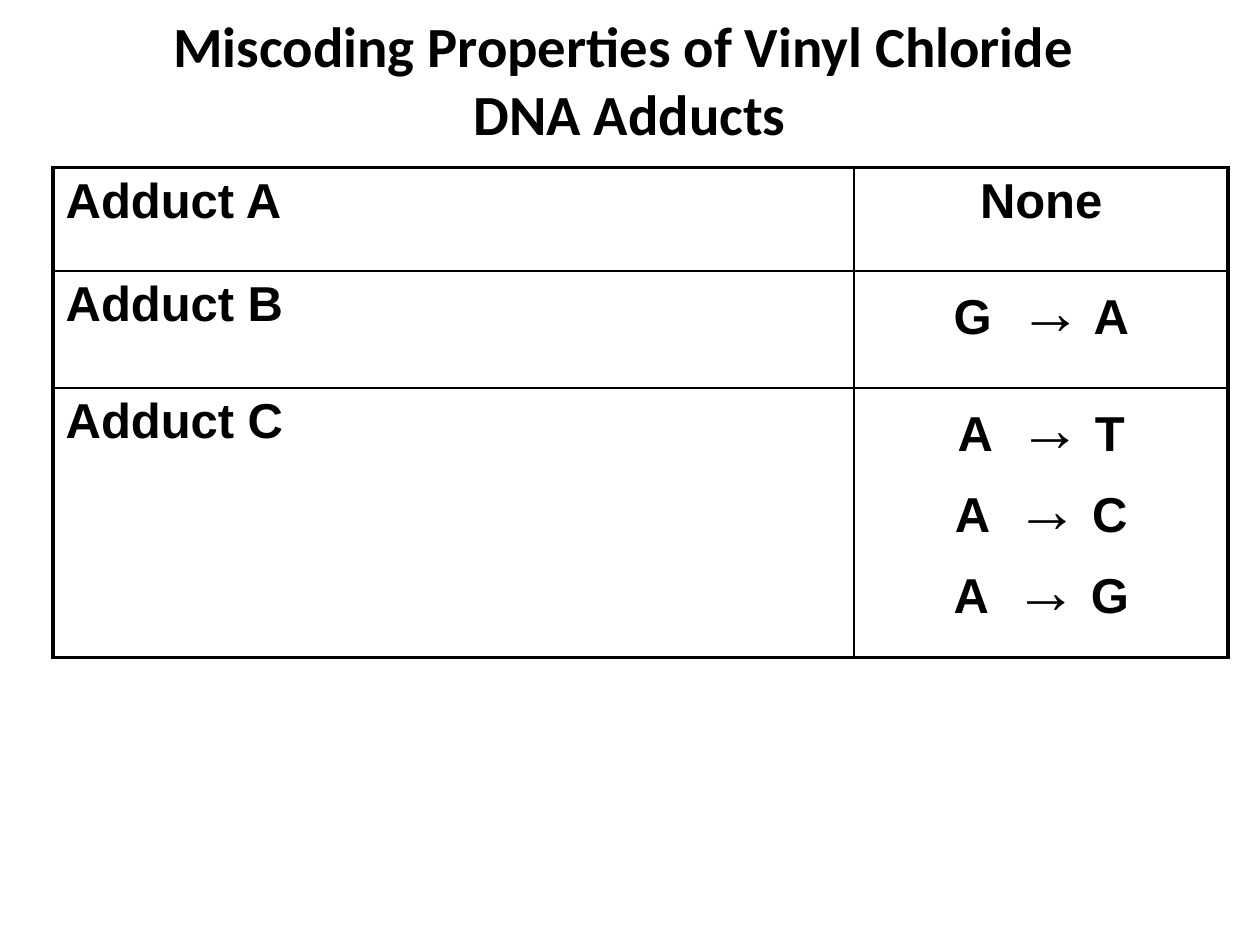
from dataclasses import dataclass

from lxml import etree
from pptx import Presentation
from pptx import util as u
from pptx.dml.color import RGBColor
from pptx.enum import text as t
from pptx.oxml.ns import qn

BLACK = RGBColor(0, 0, 0)
THICK, THIN = u.Pt(2.25), u.Pt(1)
ARROW = "→"
WIDTHS = (16.15, 7.54)


@dataclass
class Row:
    name: str
    codes: tuple[str, ...]
    height: float


ROWS = (
    Row("Adduct A", ("None",), 2.08),
    Row("Adduct B", ("G  → A",), 2.36),
    Row("Adduct C", ("A  → T", "A  → C", "A  → G"), 5.44),
)


def write(para, words: str, *, font: str = "Arial", size: float = 28,
          align=t.PP_ALIGN.LEFT, before: float = 0) -> None:
    """Fill a paragraph with bold text; arrows are set larger."""
    para.alignment = align
    para.space_before = u.Pt(before)
    head, arrow, tail = words.partition(ARROW)
    for part in filter(None, (head, arrow, tail)):
        for i, line in enumerate(part.split("\n")):
            if i:
                para.add_line_break()
            run = para.add_run()
            run.text = line
            run.font.name = font
            run.font.size = u.Pt(36 if part == ARROW else size)
            run.font.bold = True
            run.font.color.rgb = BLACK


def edge(cell, sides: dict[str, int]) -> None:
    """Draw the cell borders, given as side and line width."""
    props = cell._tc.get_or_add_tcPr()
    for i, (side, width) in enumerate(sides.items()):
        line = etree.Element(qn(f"a:ln{side}"), w=str(width))
        fill = etree.SubElement(line, qn("a:solidFill"))
        etree.SubElement(fill, qn("a:srgbClr"), val=str(BLACK))
        props.insert(i, line)


def fill_cell(cell, lines: tuple[str, ...], align) -> None:
    cell.fill.background()
    frame = cell.text_frame
    for i, line in enumerate(lines):
        para = frame.add_paragraph() if i else frame.paragraphs[0]
        write(para, line, align=align, before=6 if i else 0)


def draw_table(slide) -> None:
    high = sum(row.height for row in ROWS)
    frame = slide.shapes.add_table(len(ROWS), len(WIDTHS), u.Cm(1.07), u.Cm(3.38),
                                   u.Cm(sum(WIDTHS)), u.Cm(high))
    table = frame.table
    table.first_row = table.horz_banding = False
    for col, width in zip(table.columns, WIDTHS):
        col.width = u.Cm(width)
    for r, row in enumerate(ROWS):
        table.rows[r].height = u.Cm(row.height)
        left, right = table.cell(r, 0), table.cell(r, 1)
        fill_cell(left, (row.name,), t.PP_ALIGN.LEFT)
        fill_cell(right, row.codes, t.PP_ALIGN.CENTER)
        # The outer frame is thick, the inner rules are thin
        top = THICK if r == 0 else THIN
        base = THICK if r == len(ROWS) - 1 else THIN
        edge(left, {"L": THICK, "R": THIN, "T": top, "B": base})
        edge(right, {"L": THIN, "R": THICK, "T": top, "B": base})


def main() -> None:
    deck = Presentation()
    deck.slide_width, deck.slide_height = u.Cm(25.4), u.Cm(19.05)
    slide = deck.slides.add_slide(deck.slide_layouts[5])

    # Title
    title = slide.shapes.title
    title.left, title.top = u.Cm(1.9), u.Cm(0)
    title.width, title.height = u.Cm(21.59), u.Cm(3.18)
    frame = title.text_frame
    frame.word_wrap = True
    frame.auto_size = t.MSO_AUTO_SIZE.NONE
    frame.vertical_anchor = t.MSO_ANCHOR.MIDDLE
    write(frame.paragraphs[0], "Miscoding Properties of Vinyl Chloride \nDNA Adducts",
          font="Calibri", size=32.4, align=t.PP_ALIGN.CENTER)

    # Adducts and their miscoding
    draw_table(slide)
    deck.save("out.pptx")


if __name__ == "__main__":
    main()
